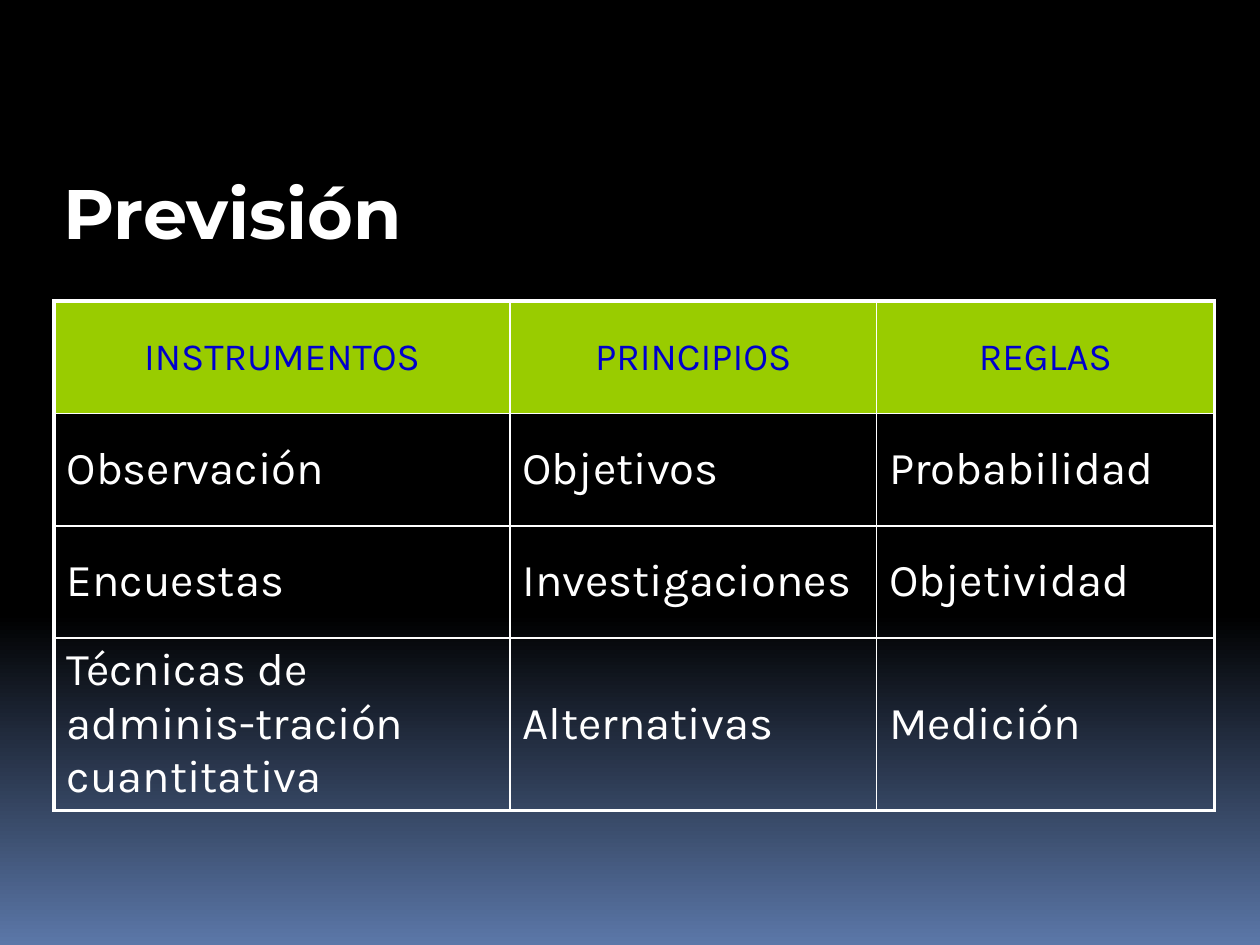
from copy import deepcopy

from lxml.etree import SubElement
from pptx import Presentation
from pptx.dml.color import RGBColor
from pptx.enum.text import MSO_ANCHOR, PP_ALIGN
from pptx.oxml.ns import qn
from pptx.util import Cm, Pt

TITLE = "Previsión"
ROWS = [
    ("INSTRUMENTOS", "PRINCIPIOS", "REGLAS"),
    ("Observación", "Objetivos", "Probabilidad"),
    ("Encuestas", "Investigaciones", "Objetividad"),
    ("Técnicas de adminis-tración cuantitativa", "Alternativas", "Medición"),
]
COLUMN_WIDTHS = [Cm(9.19), Cm(7.39), Cm(6.81)]
ROW_HEIGHTS = [Cm(2.27), Cm(2.26), Cm(2.26), Cm(2.46)]

BLACK = RGBColor(0x00, 0x00, 0x00)
WHITE = RGBColor(0xFF, 0xFF, 0xFF)
STEEL_BLUE = RGBColor(0x5B, 0x77, 0xA8)
GREEN = RGBColor(0x99, 0xCC, 0x00)
HEADER_BLUE = RGBColor(0x00, 0x00, 0xCC)
OUTER_LINE, INNER_LINE = Pt(2.25), Pt(1)


def style_font(font, name, size, color, bold=False):
    font.name, font.size, font.bold = name, Pt(size), bold
    font.color.rgb = color


def paint_background(slide):
    """Black down to 65 % of the height, then fading to blue."""
    fill = slide.background.fill
    fill.gradient()
    fill.gradient_angle = 270
    start, end = fill.gradient_stops
    start.color.rgb, start.position = BLACK, 0
    end.color.rgb, end.position = STEEL_BLUE, 1
    stops = slide.element.find(".//" + qn("a:gsLst"))
    fade_start = deepcopy(stops[0])
    fade_start.set("pos", "65000")
    stops.insert(1, fade_start)


def add_title(slide):
    title = slide.shapes.title
    title.left, title.top, title.width, title.height = Cm(1.02), Cm(3.28), Cm(19.69), Cm(1.96)
    frame = title.text_frame
    frame.text = TITLE
    frame.word_wrap = True
    frame.vertical_anchor = MSO_ANCHOR.MIDDLE
    heading = frame.paragraphs[0]
    heading.alignment = PP_ALIGN.LEFT
    style_font(heading.font, "Montserrat", 40, WHITE, bold=True)


def set_borders(cell, row, column):
    """Thick lines on the table's outer edge, thin ones inside."""
    outer_sides = {
        "a:lnL": column == 0,
        "a:lnR": column == len(COLUMN_WIDTHS) - 1,
        "a:lnT": row == 0,
        "a:lnB": row == len(ROWS) - 1,
    }
    properties = cell._tc.get_or_add_tcPr()
    for side, is_outer in outer_sides.items():
        line = SubElement(properties, qn(side), w=str(OUTER_LINE if is_outer else INNER_LINE))
        solid = SubElement(line, qn("a:solidFill"))
        SubElement(solid, qn("a:srgbClr"), val=str(WHITE))


def add_table(slide):
    table = slide.shapes.add_table(
        len(ROWS), len(COLUMN_WIDTHS), Cm(1.09), Cm(6.07),
        sum(COLUMN_WIDTHS), sum(ROW_HEIGHTS)).table
    table.horz_banding = False
    for column, width in zip(table.columns, COLUMN_WIDTHS):
        column.width = width
    for row, height in zip(table.rows, ROW_HEIGHTS):
        row.height = height

    for row, entries in enumerate(ROWS):
        for column, entry in enumerate(entries):
            cell = table.cell(row, column)
            cell.text = entry
            cell.vertical_anchor = MSO_ANCHOR.MIDDLE
            set_borders(cell, row, column)
            paragraph = cell.text_frame.paragraphs[0]
            if row == 0:
                cell.fill.solid()
                cell.fill.fore_color.rgb = GREEN
                paragraph.alignment = PP_ALIGN.CENTER
                style_font(paragraph.font, "Karla", 22, HEADER_BLUE)
            else:
                cell.fill.background()
                paragraph.alignment = PP_ALIGN.LEFT
                style_font(paragraph.font, "Karla", 26, WHITE)


def main():
    deck = Presentation()
    deck.slide_width, deck.slide_height = Cm(25.4), Cm(19.05)
    slide = deck.slides.add_slide(deck.slide_layouts[5])
    paint_background(slide)
    add_title(slide)
    add_table(slide)
    deck.save("out.pptx")


if __name__ == "__main__":
    main()
